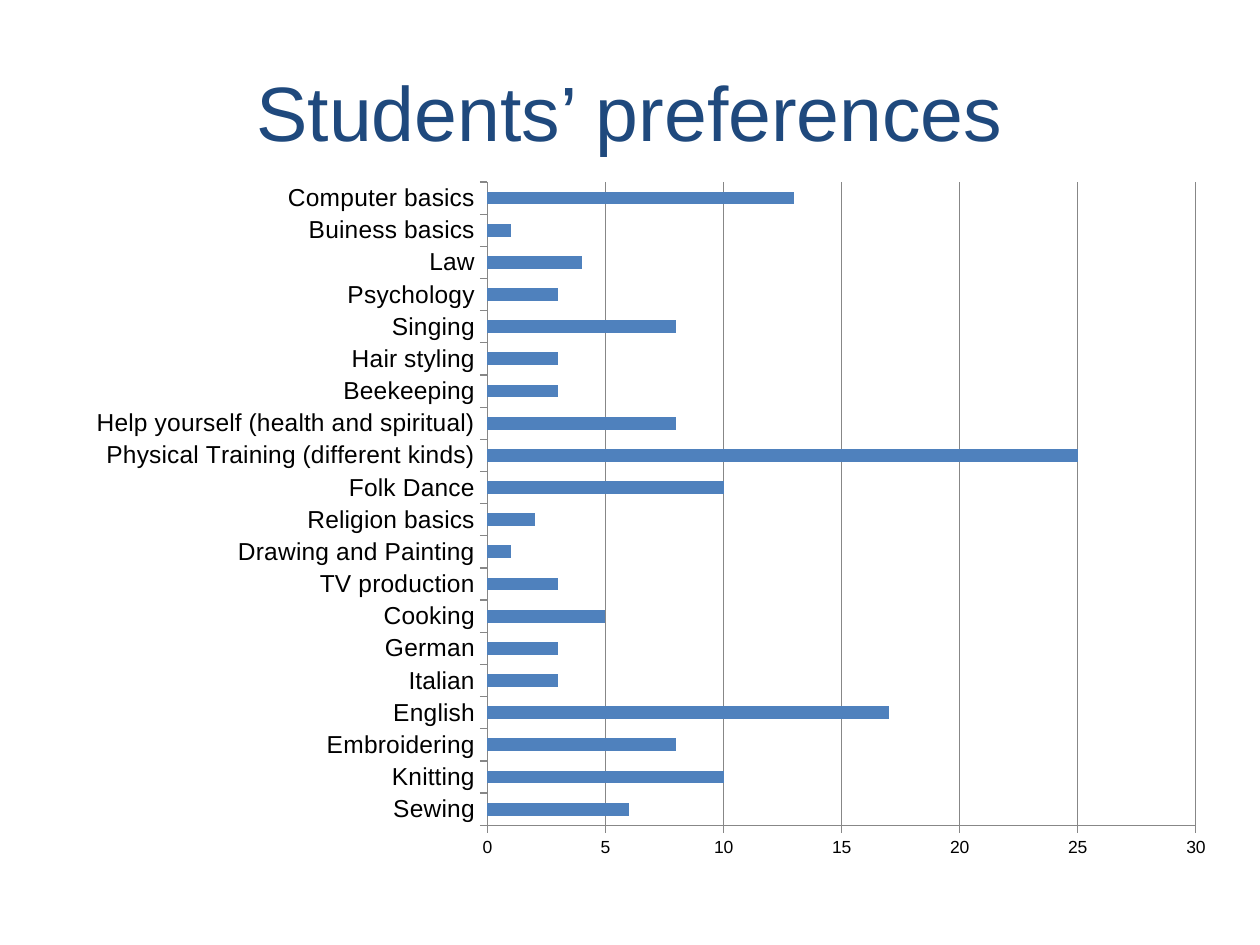
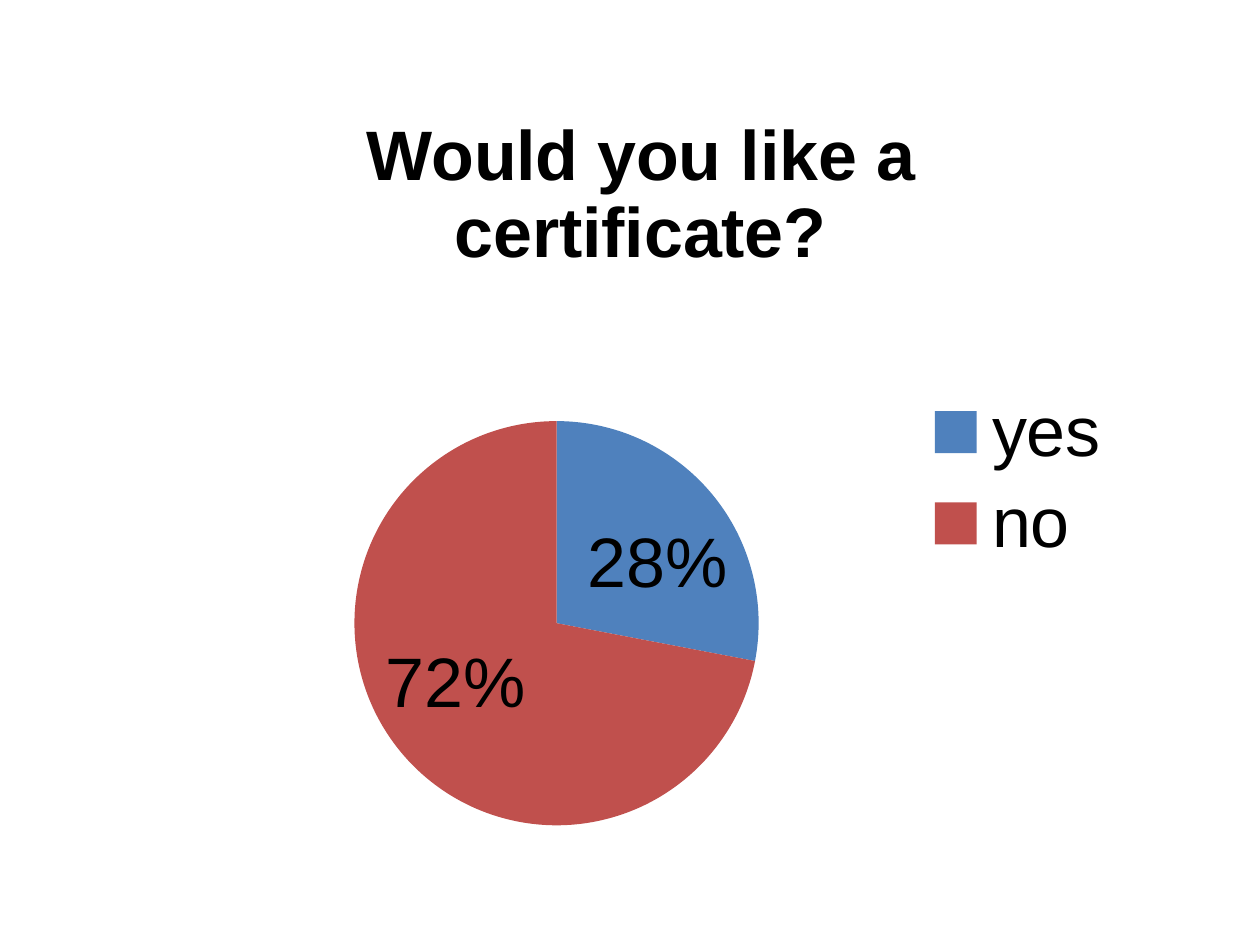
from dataclasses import dataclass
from typing import Any

from lxml.etree import SubElement
from pptx import Presentation
from pptx.chart.chart import Chart
from pptx.chart.data import CategoryChartData
from pptx.dml.color import RGBColor
from pptx.enum.chart import XL_CHART_TYPE, XL_LEGEND_POSITION, XL_TICK_MARK
from pptx.enum.text import MSO_ANCHOR, PP_ALIGN
from pptx.oxml.ns import qn
from pptx.slide import Slide
from pptx.util import Pt

# Shared scale, colours and font
PX = 9525  # EMU in one px, 96 px to the inch
NAVY = RGBColor(0x1F, 0x49, 0x7D)
BLUE = RGBColor(0x4F, 0x81, 0xBD)
RED = RGBColor(0xC0, 0x50, 0x4D)
BLACK = RGBColor(0x00, 0x00, 0x00)
GREY = RGBColor(0x87, 0x87, 0x87)
FACE = "Arial"
LARGE = {"name": FACE, "size": Pt(40), "bold": False}


@dataclass
class Box:
    left: int
    top: int
    width: int
    height: int

    def emu(self) -> tuple[int, ...]:
        return tuple(n * PX for n in (self.left, self.top, self.width, self.height))


@dataclass
class Plot:
    kind: XL_CHART_TYPE
    box: Box
    name: str
    votes: dict[str, int]


TITLE = Box(48, 24, 864, 120)
CLASSES = Plot(XL_CHART_TYPE.BAR_CLUSTERED, Box(56, 128, 880, 536), "Series 1", {
    "Sewing": 6,
    "Knitting": 10,
    "Embroidering": 8,
    "English": 17,
    "Italian": 3,
    "German": 3,
    "Cooking": 5,
    "TV production": 3,
    "Drawing and Painting": 1,
    "Religion basics": 2,
    "Folk Dance": 10,
    "Physical Training (different kinds)": 25,
    "Help yourself (health and spiritual)": 8,
    "Beekeeping": 3,
    "Hair styling": 3,
    "Singing": 8,
    "Psychology": 3,
    "Law": 4,
    "Buiness basics": 1,
    "Computer basics": 13,
})
ANSWERS = Plot(XL_CHART_TYPE.PIE, Box(112, 56, 752, 616),
               "Would you like a certificate?", {"yes": 28, "no": 72})


def style(item: Any, values: dict[str, Any]) -> None:
    for key, value in values.items():
        setattr(item, key, value)


def paint(font: Any, values: dict[str, Any], color: RGBColor = BLACK) -> None:
    style(font, values)
    font.color.rgb = color


def rule(line: Any) -> None:
    line.color.rgb = GREY
    line.width = Pt(0.75)


def add_plot(slide: Slide, plot: Plot) -> Chart:
    data = CategoryChartData()
    data.categories = list(plot.votes)
    data.add_series(plot.name, list(plot.votes.values()))
    chart = slide.shapes.add_chart(plot.kind, *plot.box.emu(), data).chart
    style(chart, {"has_title": False, "has_legend": False})
    paint(chart.font, {"name": FACE, "size": Pt(10)})
    return chart


def place(chart: Chart, x: float, y: float, w: float, h: float) -> None:
    """Fix the inner plot area as shares of the chart."""
    area = chart.plots[0]._element.getparent()
    for old in area.findall(qn("c:layout")):
        area.remove(old)
    layout = SubElement(area, qn("c:layout"))
    area.insert(0, layout)
    manual = SubElement(layout, qn("c:manualLayout"))
    values = {"layoutTarget": "inner", "xMode": "edge", "yMode": "edge",
              "x": x, "y": y, "w": w, "h": h}
    for tag, value in values.items():
        SubElement(manual, qn(f"c:{tag}")).set("val", str(value))


def add_title(slide: Slide, text: str) -> None:
    title = slide.shapes.title
    style(title, dict(zip(("left", "top", "width", "height"), TITLE.emu())))
    frame = title.text_frame
    style(frame, {"text": text, "word_wrap": True, "vertical_anchor": MSO_ANCHOR.MIDDLE})
    line = frame.paragraphs[0]
    line.alignment = PP_ALIGN.CENTER
    paint(line.runs[0].font, {"name": FACE, "size": Pt(44)}, NAVY)


def add_bars(slide: Slide) -> None:
    chart = add_plot(slide, CLASSES)
    plot = chart.plots[0]
    style(plot, {"gap_width": 150, "vary_by_categories": False})
    fill = plot.series[0].format.fill
    fill.solid()
    fill.fore_color.rgb = BLUE

    # Axes
    names, scale = chart.category_axis, chart.value_axis
    for axis, size in ((names, 14), (scale, 10)):
        style(axis, {"major_tick_mark": XL_TICK_MARK.OUTSIDE,
                     "minor_tick_mark": XL_TICK_MARK.NONE})
        paint(axis.tick_labels.font, {"name": FACE, "size": Pt(size)})
        rule(axis.format.line)
    style(names, {"has_major_gridlines": False})
    style(scale, {"has_major_gridlines": True, "minimum_scale": 0,
                  "maximum_scale": 30, "major_unit": 5})
    rule(scale.major_gridlines.format.line)


def add_pie(slide: Slide) -> None:
    chart = add_plot(slide, ANSWERS)
    place(chart, 0.21, 0.43, 0.41, 0.5)

    # Heading and legend
    chart.has_title = True
    frame = chart.chart_title.text_frame
    frame.text = ANSWERS.name
    paint(frame.paragraphs[0].runs[0].font, LARGE | {"bold": True})
    chart.has_legend = True
    style(chart.legend, {"position": XL_LEGEND_POSITION.RIGHT, "include_in_layout": False})
    paint(chart.legend.font, LARGE)

    # Slices and their shares
    plot = chart.plots[0]
    plot.vary_by_categories = True
    for spot, color in enumerate((BLUE, RED)):
        fill = plot.series[0].points[spot].format.fill
        fill.solid()
        fill.fore_color.rgb = color
    labels = plot.series[0].data_labels
    style(labels, {"show_percentage": True, "show_value": False,
                   "number_format": "0%", "number_format_is_linked": False})
    paint(labels.font, LARGE)


def main() -> None:
    deck = Presentation()
    style(deck, {"slide_width": 960 * PX, "slide_height": 720 * PX})
    titled, blank = deck.slide_layouts[5], deck.slide_layouts[6]

    # Slide 1: votes for each class
    slide = deck.slides.add_slide(titled)
    add_title(slide, "Students’ preferences")
    add_bars(slide)

    # Slide 2: wish for a certificate
    add_pie(deck.slides.add_slide(blank))

    deck.save("out.pptx")


if __name__ == "__main__":
    main()
